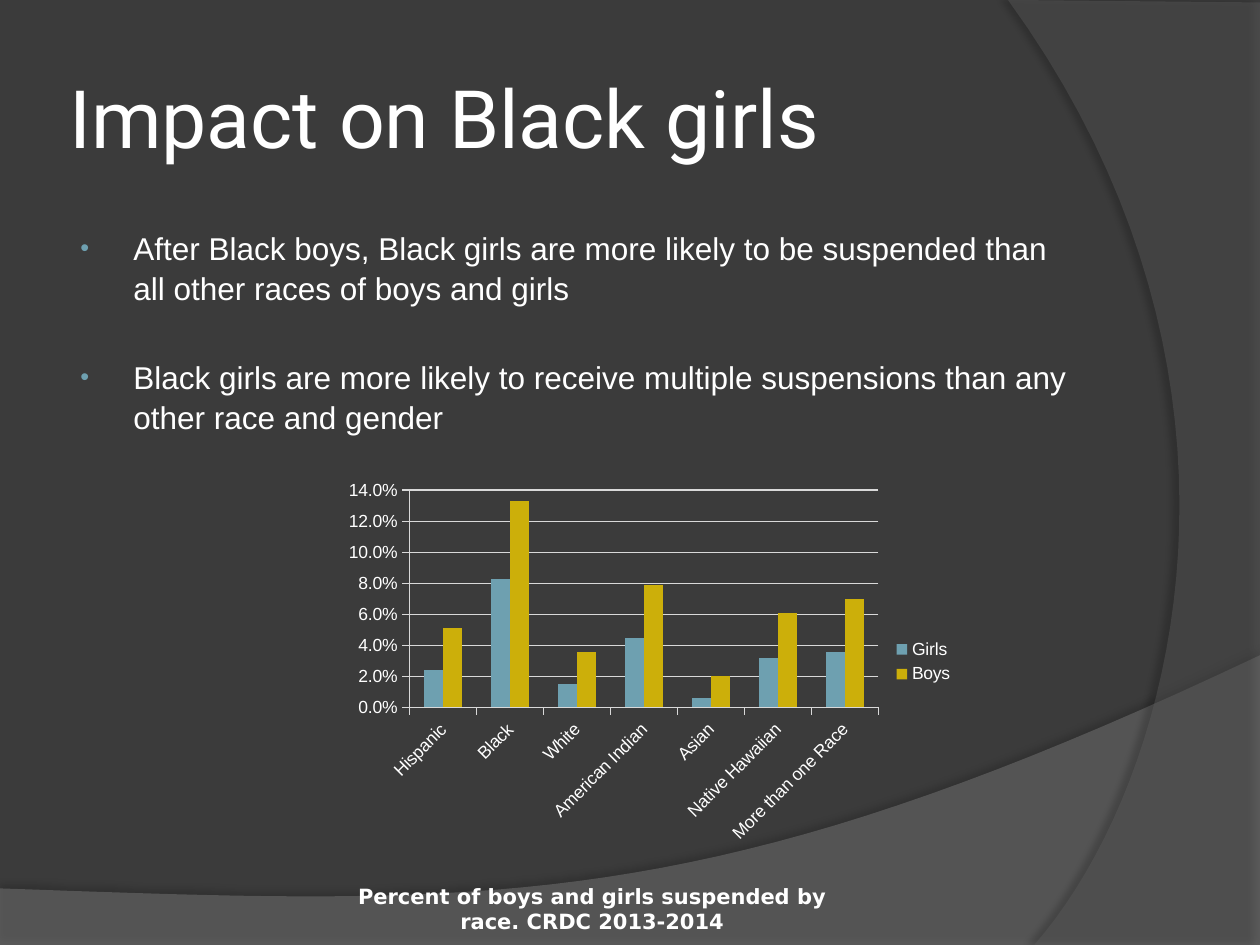
from dataclasses import dataclass

from lxml import etree
from pptx import Presentation
from pptx.chart.data import CategoryChartData
from pptx.dml.color import RGBColor
from pptx.enum.chart import XL_CHART_TYPE, XL_LEGEND_POSITION, XL_TICK_MARK
from pptx.enum.text import MSO_ANCHOR, PP_ALIGN
from pptx.oxml.ns import qn
from pptx.util import Cm, Pt

COLUMN = XL_CHART_TYPE.COLUMN_CLUSTERED
RIGHT = XL_LEGEND_POSITION.RIGHT
OUT = XL_TICK_MARK.OUTSIDE
MIDDLE, TOP = MSO_ANCHOR.MIDDLE, MSO_ANCHOR.TOP
LEFT, CENTER = PP_ALIGN.LEFT, PP_ALIGN.CENTER

HEX = {
    "back": "3B3B3B", "wave": "7F7F7F", "arc": "5E5E5E", "text": "FFFFFF",
    "shade": "000000", "grid": "D9D9D9", "girls": "6EA0B0", "boys": "CCAF0A",
}
Point = tuple[float, float]


@dataclass
class Band:
    color: str
    alpha: int
    edge: list[Point]
    curve: list[Point]  # two controls and the end
    shade: int
    dist: float
    angle: int


@dataclass
class Label:
    box: tuple[float, float, float, float]
    lines: list[str]
    font: str
    size: int
    bold: bool = False
    align: PP_ALIGN = LEFT
    anchor: MSO_ANCHOR = TOP
    inset: tuple[float, float] = (0.25, 0.13)
    bullet: bool = False


BANDS = [
    Band("wave", 45, [(0, 17.91), (0, 19.05), (25.4, 19.05), (25.4, 13.21)],
         [(14.2, 18.52), (9.93, 18.26), (0, 17.91)], 35, 3.5, 270),
    Band("arc", 40, [(25.4, 0.05), (25.4, 19.05), (20.85, 19.05)],
         [(23.75, 15.72), (25.86, 7.62), (20.32, 0)], 45, 4, 180),
]
LABELS = [
    Label((1.27, 0.76, 20.75, 3.18), ["Impact on Black girls"], "Roboto", 46,
          anchor=MIDDLE, inset=(0.13, 0.13)),
    Label((1.27, 4.45, 20.75, 12.57), [
        "After Black boys, Black girls are more likely to be suspended than "
        "all other races of boys and girls",
        "Black girls are more likely to receive multiple suspensions than any "
        "other race and gender",
    ], "Arial", 18, bullet=True),
    Label((6.84, 17.68, 10.2, 1.3),
          ["Percent of boys and girls suspended by race. CRDC 2013-2014"],
          "DejaVu Sans", 12, bold=True, align=CENTER),
]
RACES = ["Hispanic", "Black", "White", "American Indian", "Asian",
         "Native Hawaiian", "More than one Race"]
RATES = {
    "Girls": [0.024, 0.083, 0.015, 0.045, 0.006, 0.032, 0.036],
    "Boys": [0.051, 0.133, 0.036, 0.079, 0.02, 0.061, 0.07],
}


def rgb(name: str) -> RGBColor:
    return RGBColor.from_string(HEX[name])


def sub(node, tag: str, **attrs):
    return etree.SubElement(node, qn(tag), {k: str(v) for k, v in attrs.items()})


def trace(start: Point, curve: list[Point], steps: int = 40) -> list[Point]:
    """Points along a cubic curve."""
    pts = [start, *curve]
    out = []
    for i in range(1, steps + 1):
        t = i / steps
        mix = ((1 - t) ** 3, 3 * t * (1 - t) ** 2, 3 * t * t * (1 - t), t ** 3)
        out.append(tuple(sum(m * p[k] for m, p in zip(mix, pts)) for k in (0, 1)))
    return out


def draw_band(slide, band: Band) -> None:
    pts = band.edge + trace(band.edge[-1], band.curve)
    pts = [(Cm(x), Cm(y)) for x, y in pts]
    pen = slide.shapes.build_freeform(*pts[0])
    pen.add_line_segments(pts[1:], close=True)
    shape = pen.convert_to_shape()
    shape.fill.solid()
    shape.fill.fore_color.rgb = rgb(band.color)
    shape.line.fill.background()
    props = shape._element.spPr
    sub(props.find(f".//{qn('a:srgbClr')}"), "a:alpha", val=band.alpha * 1000)
    # Soft shade along the curved edge
    fx = sub(props, "a:effectLst")
    cast = sub(fx, "a:outerShdw", blurRad=Pt(4), dist=Pt(band.dist),
               dir=band.angle * 60000, algn="ctr", rotWithShape=0)
    tint = sub(cast, "a:srgbClr", val=HEX["shade"])
    sub(tint, "a:alpha", val=band.shade * 1000)


def add_bullet(para) -> None:
    props = para._p.get_or_add_pPr()
    props.set("marL", str(Cm(1.17)))
    props.set("indent", str(-Cm(1.07)))
    sub(sub(props, "a:buClr"), "a:srgbClr", val=HEX["girls"])
    sub(props, "a:buSzPct", val=80000)
    sub(props, "a:buFont", typeface="Arial")
    sub(props, "a:buChar", char="•")


def draw_label(slide, label: Label) -> None:
    frame = slide.shapes.add_textbox(*map(Cm, label.box)).text_frame
    frame.word_wrap = True
    frame.vertical_anchor = label.anchor
    frame.margin_left = frame.margin_right = Cm(label.inset[0])
    frame.margin_top = frame.margin_bottom = Cm(label.inset[1])
    for i, line in enumerate(label.lines):
        para = frame.paragraphs[0] if i == 0 else frame.add_paragraph()
        para.alignment = label.align
        if label.bullet:
            para.line_spacing = 1.05
            para.space_before = Pt(28.5 if i else 3.6)
            add_bullet(para)
        run = para.add_run()
        run.text = line
        run.font.name = label.font
        run.font.size = Pt(label.size)
        run.font.bold = label.bold
        run.font.color.rgb = rgb("text")


def draw_chart(slide) -> None:
    data = CategoryChartData(number_format="0.0%")
    data.categories = RACES
    for name, rates in RATES.items():
        data.add_series(name, rates)
    box = map(Cm, (6.78, 9.53, 12.7, 7.62))
    chart = slide.shapes.add_chart(COLUMN, *box, data).chart
    chart.has_title = False
    chart.font.name = "Arial"
    chart.font.size = Pt(10)
    chart.font.color.rgb = rgb("text")
    chart.has_legend = True
    chart.legend.position = RIGHT
    chart.legend.include_in_layout = False
    # Bars
    plot = chart.plots[0]
    plot.gap_width = 150
    plot.overlap = 0
    plot.vary_by_categories = False
    for bar in plot.series:
        bar.format.fill.solid()
        bar.format.fill.fore_color.rgb = rgb(bar.name.lower())
    # Axes
    cats, vals = chart.category_axis, chart.value_axis
    vals.has_major_gridlines = True
    vals.minimum_scale, vals.maximum_scale, vals.major_unit = 0, 0.14, 0.02
    vals.tick_labels.number_format = "0.0%"
    vals.tick_labels.number_format_is_linked = False
    for axis in (cats, vals):
        axis.major_tick_mark = OUT
    for line in (cats.format.line, vals.format.line,
                 vals.major_gridlines.format.line):
        line.color.rgb = rgb("grid")
        line.width = Pt(0.75)
    cats.tick_labels.font.size = Pt(10)
    cats._element.find(f".//{qn('a:bodyPr')}").set("rot", str(-45 * 60000))


def main() -> None:
    deck = Presentation()
    deck.slide_width, deck.slide_height = Cm(25.4), Cm(19.05)
    slide = deck.slides.add_slide(deck.slide_layouts[6])
    slide.background.fill.solid()
    slide.background.fill.fore_color.rgb = rgb("back")
    for band in BANDS:
        draw_band(slide, band)
    for label in LABELS:
        draw_label(slide, label)
    draw_chart(slide)
    deck.save("out.pptx")


if __name__ == "__main__":
    main()
